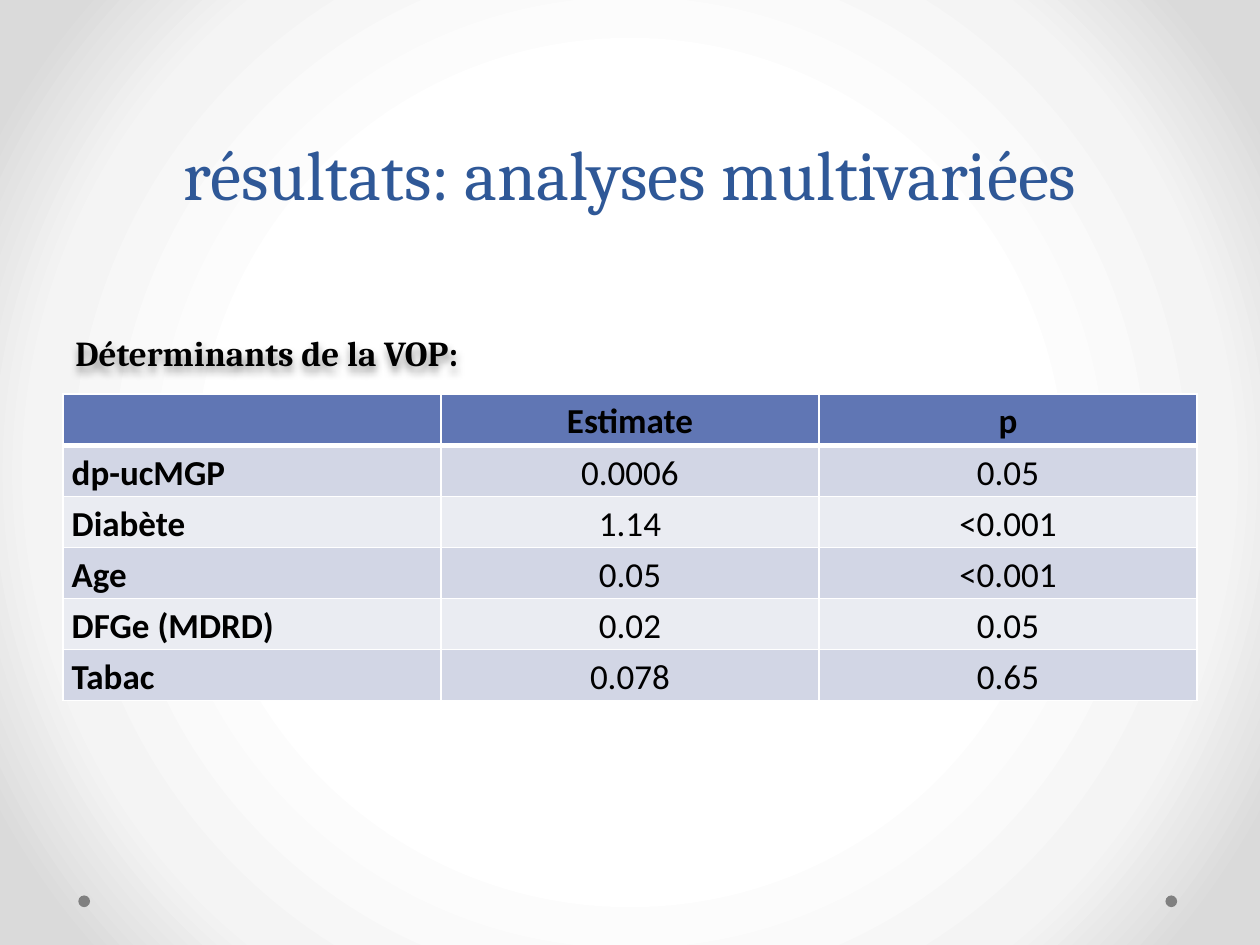
from lxml.etree import SubElement
from pptx import Presentation
from pptx.dml.color import RGBColor
from pptx.enum.shapes import MSO_SHAPE as Preset
from pptx.enum.text import MSO_ANCHOR as Anchor, PP_ALIGN as Align
from pptx.oxml import parse_xml
from pptx.oxml.ns import nsdecls, qn
from pptx.util import Pt

BLACK = RGBColor(0x00, 0x00, 0x00)
WHITE = RGBColor(0xFF, 0xFF, 0xFF)
LIGHT_GREY = RGBColor(0xF4, 0xF4, 0xF4)
SILVER = RGBColor(0xDA, 0xDA, 0xDA)
DOT_GREY = RGBColor(0x80, 0x80, 0x80)
TITLE_BLUE = RGBColor(0x2F, 0x58, 0x97)
HEADER_BLUE = RGBColor(0x60, 0x76, 0xB4)
BAND_DARK = RGBColor(0xD2, 0xD6, 0xE5)
BAND_LIGHT = RGBColor(0xEA, 0xEC, 0xF2)

MARGIN = 36
CONTENT_WIDTH = 648
ROW_HEIGHT = 29.2
BACKGROUND_STOPS = [(50, WHITE), (76, LIGHT_GREY), (92, SILVER)]
DETERMINANTS = [
    ("", "Estimate", "p"),
    ("dp-ucMGP", "0.0006", "0.05"),
    ("Diabète", "1.14", "<0.001"),
    ("Age", "0.05", "<0.001"),
    ("DFGe (MDRD)", "0.02", "0.05"),
    ("Tabac", "0.078", "0.65"),
]


def set_radial_background(slide):
    fill = slide.background.fill
    fill.gradient()
    gradient = slide.element.find(".//" + qn("a:gradFill"))
    stops = "".join(
        f'<a:gs pos="{position * 1000}"><a:srgbClr val="{color}"/></a:gs>'
        for position, color in BACKGROUND_STOPS)
    gradient.getparent().replace(gradient, parse_xml(
        f'<a:gradFill {nsdecls("a")} rotWithShape="1"><a:gsLst>{stops}</a:gsLst>'
        '<a:path path="circle"><a:fillToRect l="50000" t="50000" r="50000" b="50000"/>'
        '</a:path></a:gradFill>'))


def add_dot(slide, left):
    dot = slide.shapes.add_shape(Preset.OVAL, Pt(left), Pt(511.7), Pt(6.7), Pt(6.7))
    dot.shadow.inherit = False
    dot.fill.solid()
    dot.fill.fore_color.rgb = DOT_GREY
    dot.line.fill.background()


def add_run(paragraph, text, font_name, size, color, bold=False):
    run = paragraph.add_run()
    run.text = text
    run.font.name = font_name
    run.font.size = Pt(size)
    run.font.color.rgb = color
    run.font.bold = bold


def add_text_box(slide, top, height, anchor):
    """Add a text box across the content width; return it and its paragraph."""
    box = slide.shapes.add_textbox(Pt(MARGIN), Pt(top), Pt(CONTENT_WIDTH), Pt(height))
    box.text_frame.word_wrap = True
    box.text_frame.vertical_anchor = anchor
    return box, box.text_frame.paragraphs[0]


def add_soft_shadow(shape):
    shape._element.spPr.append(parse_xml(
        f'<a:effectLst {nsdecls("a")}><a:outerShdw blurRad="50800" dist="38100" '
        'dir="5400000" algn="t" rotWithShape="0"><a:srgbClr val="000000">'
        '<a:alpha val="40000"/></a:srgbClr></a:outerShdw></a:effectLst>'))


def set_borders(cell, bottom_width):
    properties = cell._tc.get_or_add_tcPr()
    for side, width in (("L", 1), ("R", 1), ("T", 1), ("B", bottom_width)):
        line = SubElement(properties, qn(f"a:ln{side}"), w=str(Pt(width)))
        fill = SubElement(line, qn("a:solidFill"))
        SubElement(fill, qn("a:srgbClr"), val=str(WHITE))


def fill_cell(cell, text, row, column):
    is_header = row == 0
    set_borders(cell, 3 if is_header else 1)
    cell.fill.solid()
    band = BAND_DARK if row % 2 else BAND_LIGHT
    cell.fill.fore_color.rgb = HEADER_BLUE if is_header else band
    cell.margin_left = cell.margin_right = Pt(5)
    cell.margin_top = cell.margin_bottom = Pt(0)
    paragraph = cell.text_frame.paragraphs[0]
    paragraph.alignment = Align.CENTER if column else Align.LEFT
    paragraph.line_spacing = 1.15
    if text:
        add_run(paragraph, text, "Calibri", 20, BLACK, bold=is_header or column == 0)


def add_determinants_table(slide):
    row_count, column_count = len(DETERMINANTS), len(DETERMINANTS[0])
    table = slide.shapes.add_table(
        row_count, column_count, Pt(MARGIN), Pt(225.2),
        Pt(CONTENT_WIDTH), Pt(ROW_HEIGHT * row_count)).table
    for row, values in enumerate(DETERMINANTS):
        for column, text in enumerate(values):
            fill_cell(table.cell(row, column), text, row, column)


def main():
    presentation = Presentation()
    presentation.slide_width, presentation.slide_height = Pt(720), Pt(540)
    slide = presentation.slides.add_slide(presentation.slide_layouts[6])
    set_radial_background(slide)
    for left in (666, 44.8):
        add_dot(slide, left)

    _, title = add_text_box(slide, 0, 126, Anchor.BOTTOM)
    title.alignment = Align.CENTER
    title.line_spacing = Pt(58)
    add_run(title, "résultats: analyses multivariées", "Cambria", 40, TITLE_BLUE)

    add_determinants_table(slide)

    caption_box, caption = add_text_box(slide, 186, 31, Anchor.MIDDLE)
    add_run(caption, "Déterminants de la VOP:", "Cambria", 20, BLACK, bold=True)
    add_soft_shadow(caption_box)
    presentation.save("out.pptx")


if __name__ == "__main__":
    main()
